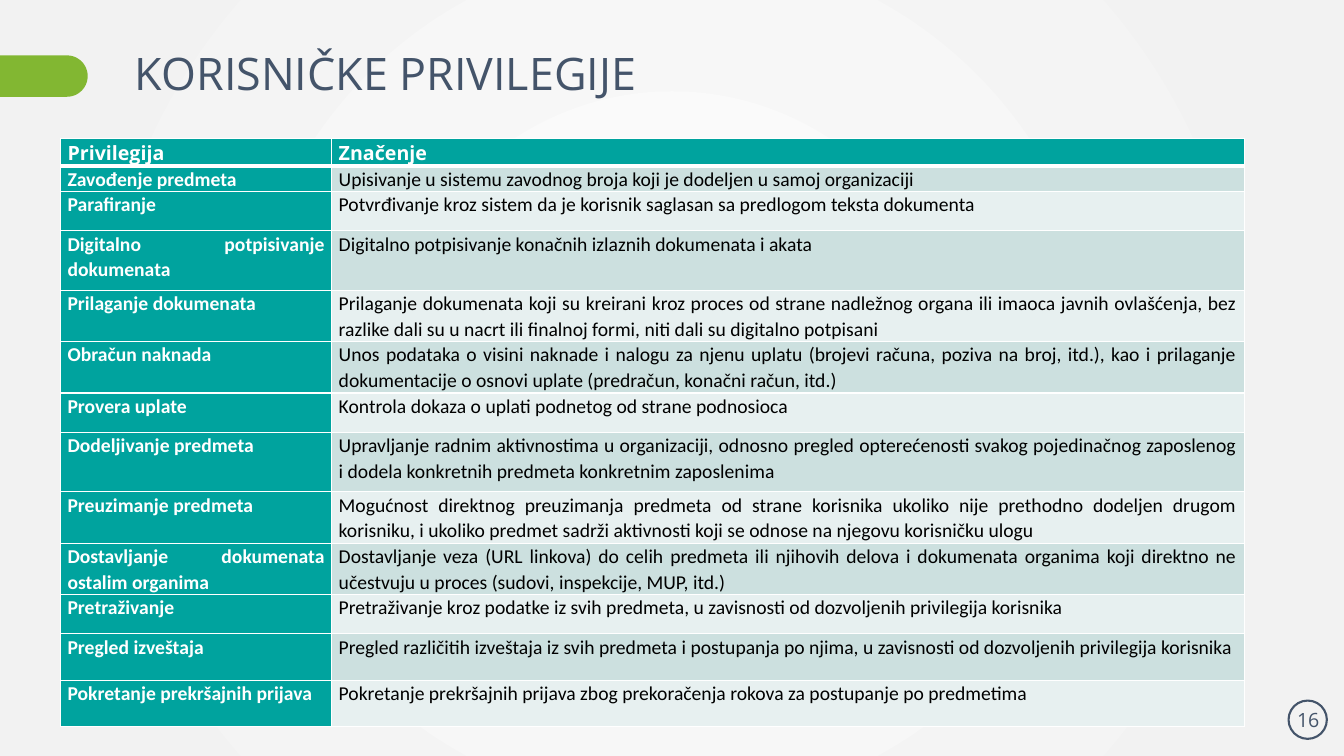
import math

from lxml import etree
from pptx import Presentation
from pptx import util as u
from pptx.dml.color import RGBColor
from pptx.enum import shapes, text
from pptx.oxml.ns import qn

TITLE = "KORISNIČKE PRIVILEGIJE"
PAGE = "16"
HEADER = ("Privilegija", "Značenje")
# privilege, meaning, row height in inches
PRIVILEGES = [
    ("Zavođenje predmeta",
     "Upisivanje u sistemu zavodnog broja koji je dodeljen u samoj organizaciji", 0.25),
    ("Parafiranje",
     "Potvrđivanje kroz sistem da je korisnik saglasan sa predlogom teksta dokumenta", 0.39),
    ("Digitalno potpisivanje dokumenata",
     "Digitalno potpisivanje konačnih izlaznih dokumenata i akata", 0.59),
    ("Prilaganje dokumenata",
     "Prilaganje dokumenata koji su kreirani kroz proces od strane nadležnog organa ili imaoca "
     "javnih ovlašćenja, bez razlike dali su u nacrt ili finalnoj formi, niti dali su digitalno "
     "potpisani", 0.51),
    ("Obračun naknada",
     "Unos podataka o visini naknade i nalogu za njenu uplatu (brojevi računa, poziva na broj, "
     "itd.), kao i prilaganje dokumentacije o osnovi uplate (predračun, konačni račun, itd.)", 0.51),
    ("Provera uplate",
     "Kontrola dokaza o uplati podnetog od strane podnosioca", 0.39),
    ("Dodeljivanje predmeta",
     "Upravljanje radnim aktivnostima u organizaciji, odnosno pregled opterećenosti svakog "
     "pojedinačnog zaposlenog i dodela konkretnih predmeta konkretnim zaposlenima", 0.59),
    ("Preuzimanje predmeta",
     "Mogućnost direktnog preuzimanja predmeta od strane korisnika ukoliko nije prethodno dodeljen "
     "drugom korisniku, i ukoliko predmet sadrži aktivnosti koji se odnose na njegovu korisničku "
     "ulogu", 0.51),
    ("Dostavljanje dokumenata ostalim organima",
     "Dostavljanje veza (URL linkova) do celih predmeta ili njihovih delova i dokumenata organima "
     "koji direktno ne učestvuju u proces (sudovi, inspekcije, MUP, itd.)", 0.51),
    ("Pretraživanje",
     "Pretraživanje kroz podatke iz svih predmeta, u zavisnosti od dozvoljenih privilegija "
     "korisnika", 0.39),
    ("Pregled izveštaja",
     "Pregled različitih izveštaja iz svih predmeta i postupanja po njima, u zavisnosti od "
     "dozvoljenih privilegija korisnika", 0.46),
    ("Pokretanje prekršajnih prijava",
     "Pokretanje prekršajnih prijava zbog prekoračenja rokova za postupanje po predmetima", 0.46),
]
COLUMNS = (2.69, 9.05)
HEADER_HEIGHT = 0.28
SLATE, TEAL, GREEN, WHITE, BLACK = "44546A", "00A39E", "82B732", "FFFFFF", "000000"
BANDS = ("CCE0DF", "E7F0F0")
GLOW = ((0, "FCFCFC"), (0.93, "F2F2F2"))


def color(hex_value):
    return RGBColor.from_string(hex_value)


def inches(*lengths):
    return [u.Inches(length) for length in lengths]


def style(paragraph, size, font, hex_value, bold=False):
    paragraph.font.size = u.Pt(size)
    paragraph.font.name = font
    paragraph.font.color.rgb = color(hex_value)
    paragraph.font.bold = bold


def paint_background(slide):
    """Fill the background with a circular gradient from the centre."""
    fill = slide.background.fill
    fill.gradient()
    for stop, (position, hex_value) in zip(fill.gradient_stops, GLOW):
        stop.position = position
        stop.color.rgb = color(hex_value)
    linear = next(slide._element.iter(qn("a:lin")))
    circle = etree.Element(qn("a:path"), path="circle")
    etree.SubElement(circle, qn("a:fillToRect"), l="50000", t="50000", r="50000", b="50000")
    linear.getparent().replace(linear, circle)


def add_tab(slide, top, length, thickness):
    """Add a bar from the left edge of the slide with a half-round right end."""
    radius = thickness / 2
    angles = [math.radians(degrees) for degrees in range(-90, 91, 5)]
    rounded_end = [(length - radius + radius * math.cos(a), top + radius + radius * math.sin(a))
                   for a in angles]
    outline = slide.shapes.build_freeform(0, u.Inches(top), scale=1.0)
    outline.add_line_segments([inches(*point) for point in rounded_end + [(0, top + thickness)]])
    tab = outline.convert_to_shape()
    tab.shadow.inherit = False
    tab.fill.solid()
    tab.fill.fore_color.rgb = color(GREEN)
    tab.line.fill.background()


def add_label(slide, box, words, size, align):
    frame = slide.shapes.add_textbox(*inches(*box)).text_frame
    frame.word_wrap = True
    frame.vertical_anchor = text.MSO_ANCHOR.MIDDLE
    label = frame.paragraphs[0]
    label.text = words
    label.alignment = align
    style(label, size, "Open Sans", SLATE)
    return label


def set_borders(cell, widths):
    """Draw white borders; widths are points for left, right, top, bottom."""
    properties = cell._tc.get_or_add_tcPr()
    for place, (side, width) in enumerate(zip("LRTB", widths)):
        line = etree.Element(qn(f"a:ln{side}"), w=str(u.Pt(width)))
        fill = etree.SubElement(line, qn("a:solidFill"))
        etree.SubElement(fill, qn("a:srgbClr"), val=WHITE)
        properties.insert(place, line)


def add_privileges(slide):
    rows = [(*HEADER, HEADER_HEIGHT), *PRIVILEGES]
    size = sum(COLUMNS), sum(row[-1] for row in rows)
    table = slide.shapes.add_table(len(rows), len(COLUMNS), *inches(0.6, 1.37, *size)).table
    table.horz_banding = False
    for column, width in zip(table.columns, COLUMNS):
        column.width = u.Inches(width)
    for r, (*words, height) in enumerate(rows):
        table.rows[r].height = u.Inches(height)
        for c, wording in enumerate(words):
            cell = table.cell(r, c)
            strong = r == 0 or c == 0
            cell.margin_left = cell.margin_right = u.Inches(0.07)
            cell.margin_top = cell.margin_bottom = 0
            cell.fill.solid()
            cell.fill.fore_color.rgb = color(TEAL if strong else BANDS[(r - 1) % 2])
            set_borders(cell, (1, 1, 3 if r == 1 else 1, 3 if r == 0 else 1))
            paragraph = cell.text_frame.paragraphs[0]
            paragraph.text = wording
            paragraph.alignment = text.PP_ALIGN.JUSTIFY
            paragraph.line_spacing = 1.07
            style(paragraph, 14, "Calibri" if r else "Open Sans",
                  WHITE if strong else BLACK, strong)


def main():
    deck = Presentation()
    deck.slide_width, deck.slide_height = inches(13.33, 7.5)
    slide = deck.slides.add_slide(deck.slide_layouts[6])
    paint_background(slide)

    ring = slide.shapes.add_shape(shapes.MSO_SHAPE.OVAL, *inches(12.78, 6.95, 0.38, 0.38))
    ring.shadow.inherit = False
    ring.fill.background()
    ring.line.color.rgb = color(SLATE)
    ring.line.width = u.Pt(1.5)

    add_tab(slide, top=0.55, length=0.87, thickness=0.41)
    title = add_label(slide, (1.24, 0.14, 10.86, 1.23), TITLE, 32, text.PP_ALIGN.LEFT)
    title.line_spacing = 0.9
    add_label(slide, (12.75, 6.94, 0.45, 0.4), PAGE, 14, text.PP_ALIGN.CENTER)
    add_privileges(slide)
    deck.save("out.pptx")


if __name__ == "__main__":
    main()
